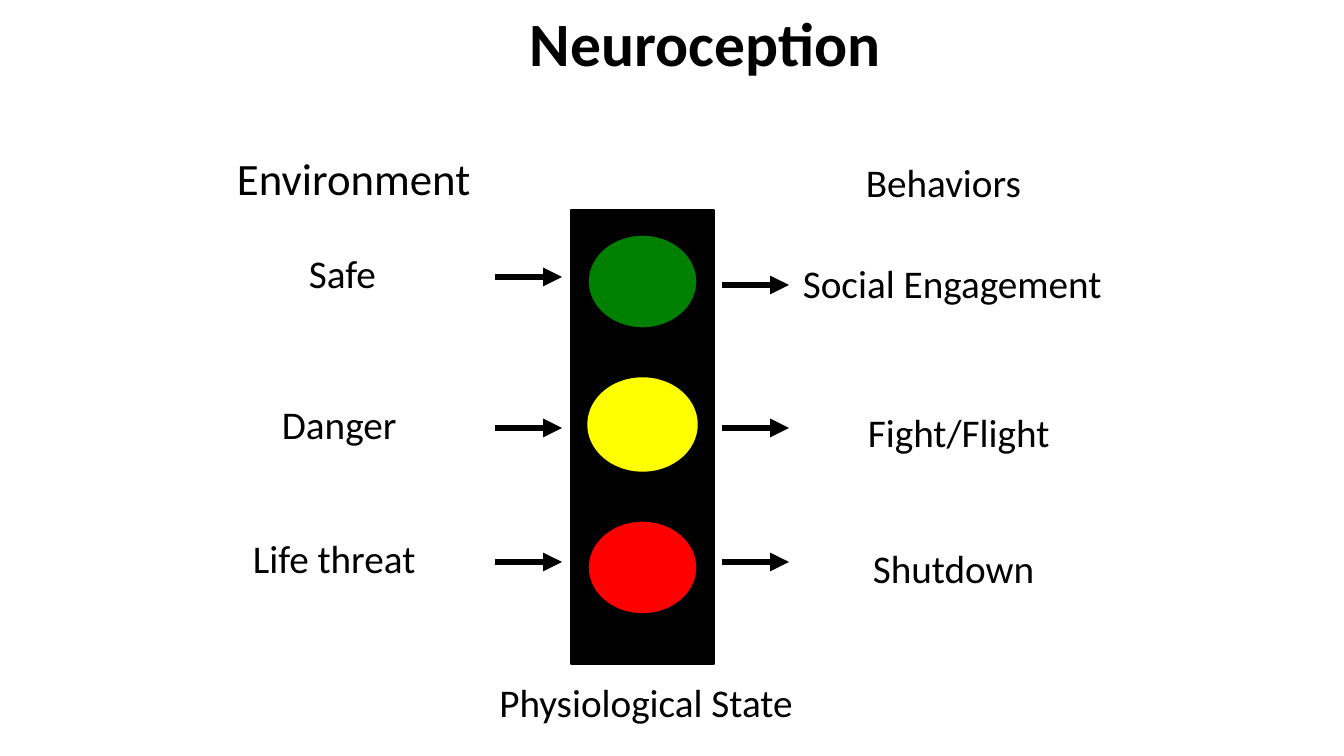
"""Build the Neuroception traffic light slide."""
from lxml.etree import SubElement
from pptx import Presentation
from pptx.dml.color import RGBColor
from pptx.enum.shapes import MSO_CONNECTOR, MSO_SHAPE
from pptx.enum.text import MSO_ANCHOR, MSO_AUTO_SIZE, PP_ALIGN
from pptx.oxml.ns import qn
from pptx.util import Pt

COLORS = {"black": "000000", "green": "008000", "yellow": "FFFF00", "red": "FF0000"}
FONT = "Calibri"
SLIDE_SIZE = (1344, 756)
EMU_PER_PX = 914400 / 100.8

TITLE = ("Neuroception", (445, 0, 521, 84), 44)
HOUSING = (571, 210, 143, 454)
LAMPS = [("green", "black"), ("yellow", "yellow"), ("red", "black")]
LAMP_SIZE = (109, 93)
FIRST_LAMP_TOP, LAMP_PITCH = 235, 143
ARROW_LENGTH = 67
ARROWS = {495: (277, 428, 562), 722: (285, 428, 562)}
CAPTION = ("Physiological State", (453, 673, 386, 57), 28)
LABELS = [
    ("Environment", (227, 146, 256, 64), 32),
    ("Safe", (299, 244, 88, 57), 28),
    ("Danger", (272, 395, 136, 57), 28),
    ("Life threat", (243, 529, 184, 57), 28),
    ("Behaviors", (856, 153, 177, 57), 28),
    ("Social Engagement", (793, 254, 322, 57), 28),
    ("Fight/Flight", (858, 403, 204, 57), 28),
    ("Shutdown", (863, 539, 183, 57), 28),
]


def emu(*lengths):
    return [round(length * EMU_PER_PX) for length in lengths]


def color(name):
    return RGBColor.from_string(COLORS[name])


def write(box, text, size, align, wrap=True, bold=False):
    frame = box.text_frame
    frame.word_wrap = wrap
    frame.auto_size = MSO_AUTO_SIZE.NONE
    frame.vertical_anchor = MSO_ANCHOR.TOP
    para = frame.paragraphs[0]
    para.alignment = align
    span = para.add_run()
    span.text = text
    span.font.name = FONT
    span.font.size = Pt(size)
    span.font.bold = bold
    span.font.color.rgb = color("black")


def add_solid(page, kind, area, fill, outline):
    solid = page.shapes.add_shape(kind, *emu(*area))
    solid.shadow.inherit = False
    solid.fill.solid()
    solid.fill.fore_color.rgb = color(fill)
    solid.line.color.rgb = color(outline)
    solid.line.width = Pt(1)


def add_arrow(page, left, y):
    arrow = page.shapes.add_connector(
        MSO_CONNECTOR.STRAIGHT, *emu(left, y, left + ARROW_LENGTH, y))
    arrow.line.color.rgb = color("black")
    arrow.line.width = Pt(4.5)
    SubElement(arrow.line._get_or_add_ln(), qn("a:tailEnd"), type="triangle")
    SubElement(arrow._element.spPr, qn("a:effectLst"))


def main():
    deck = Presentation()
    deck.slide_width, deck.slide_height = emu(*SLIDE_SIZE)
    page = deck.slides.add_slide(deck.slide_layouts[5])

    text, area, size = TITLE
    title = page.shapes.title
    title.left, title.top, title.width, title.height = emu(*area)
    write(title, text, size, PP_ALIGN.CENTER, bold=True)

    add_solid(page, MSO_SHAPE.RECTANGLE, HOUSING, "black", "black")
    lamp_left = HOUSING[0] + (HOUSING[2] - LAMP_SIZE[0]) / 2
    for index, (fill, outline) in enumerate(LAMPS):
        lamp_top = FIRST_LAMP_TOP + index * LAMP_PITCH
        add_solid(page, MSO_SHAPE.OVAL, (lamp_left, lamp_top, *LAMP_SIZE), fill, outline)

    for left, heights in ARROWS.items():
        for y in heights:
            add_arrow(page, left, y)

    for text, area, size in LABELS:
        box = page.shapes.add_textbox(*emu(*area))
        write(box, text, size, PP_ALIGN.LEFT, wrap=False)
    text, area, size = CAPTION
    write(page.shapes.add_textbox(*emu(*area)), text, size, PP_ALIGN.CENTER)

    deck.save("out.pptx")


if __name__ == "__main__":
    main()
